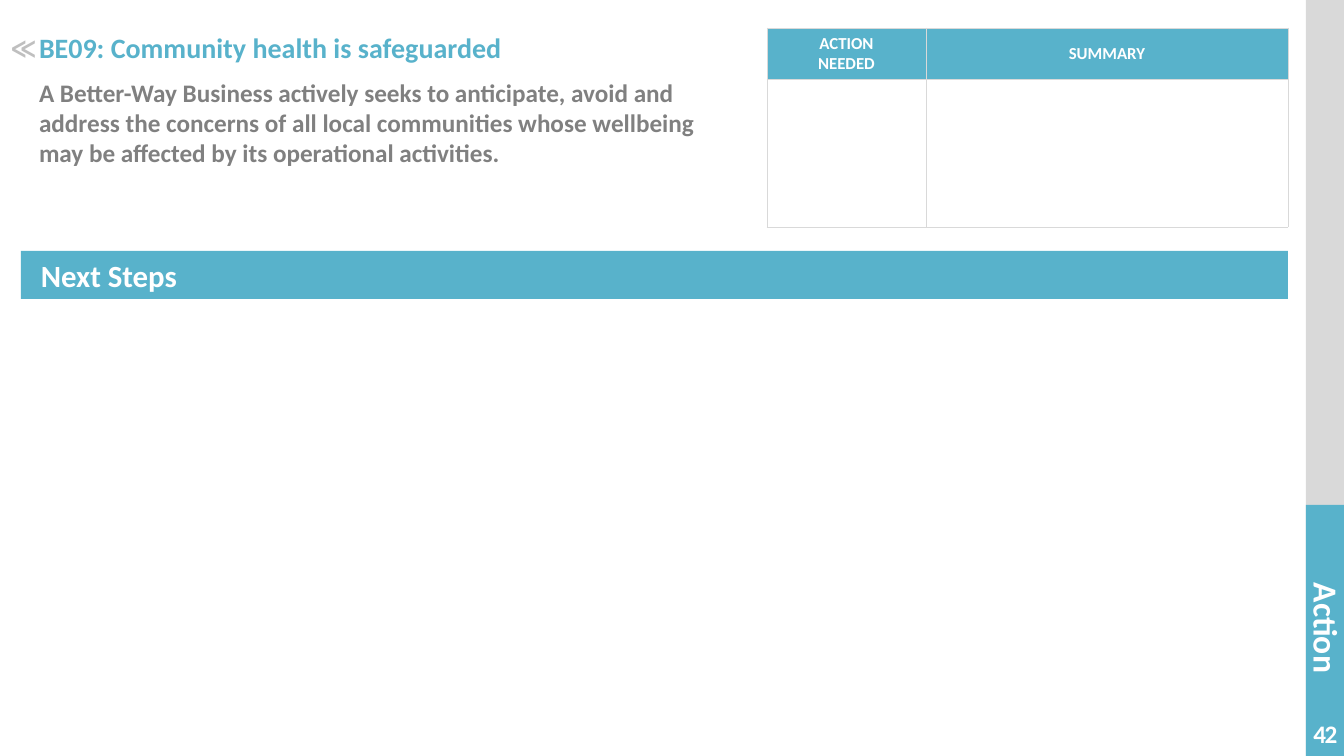
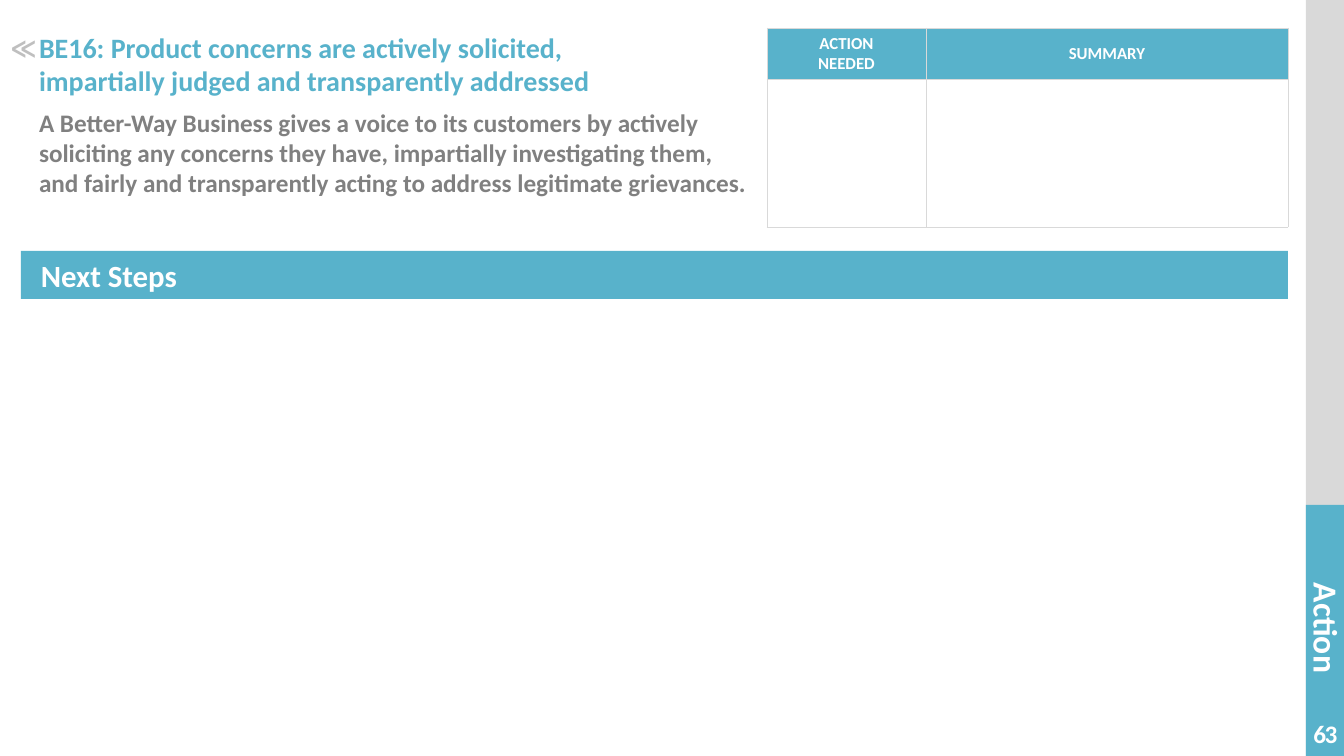
from copy import deepcopy
from dataclasses import dataclass
from typing import NamedTuple

from lxml.etree import SubElement
from pptx import Presentation
from pptx.dml.color import RGBColor as RGB
from pptx.enum.shapes import MSO_SHAPE as Shape
from pptx.enum.text import MSO_ANCHOR as Anchor, MSO_AUTO_SIZE as Fit, PP_ALIGN as Align
from pptx.oxml.ns import qn
from pptx.util import Emu, Pt


@dataclass(frozen=True)
class Theme:
    font: str = "Calibri"
    teal: str = "58B2CB"
    pale: str = "D9D9D9"
    mark: str = "BFBFBF"
    grey: str = "808080"
    white: str = "FFFFFF"
    title: int = 20
    body: int = 18
    band: int = 22
    tab: int = 24
    head: int = 12


class Box(NamedTuple):
    left: int
    top: int
    width: int
    height: int


class Style(NamedTuple):
    size: int
    color: str
    align: Align = Align.LEFT
    anchor: Anchor = Anchor.MIDDLE
    inset: tuple[int, int, int, int] = (0, 0, 0, 0)
    wrap: bool = True


class Goal(NamedTuple):
    title: str
    body: str
    top: int
    page: str


THEME = Theme()
SCALE = 914400 / 100.8
WIDTH, HEIGHT = 1344, 756

RAIL = Box(1306, 0, 38, HEIGHT)
TAB = Box(1306, 505, 38, 251)
BAND = Box(21, 251, 1267, 48)
TITLE = Box(29, 25, 699, 44)
BODY = Box(29, 72, 738, 148)
MARK = Box(4, 35, 39, 24)
PAGE = Box(1307, 711, 37, 45)
TABLE = Box(767, 28, 521, 199)
COLS = (159, 362)
ROWS = (51, 148)
HEADS = ("ACTION\vNEEDED", "SUMMARY")

PAD = (10, 5, 10, 5)
TITLE_STYLE = Style(THEME.title, THEME.teal, anchor=Anchor.TOP, inset=PAD)
BODY_STYLE = Style(THEME.body, THEME.grey, anchor=Anchor.TOP, inset=PAD)
BAND_STYLE = Style(THEME.band, THEME.white, inset=(20, 0, 20, 0), wrap=False)
TAB_STYLE = Style(THEME.tab, THEME.white, Align.CENTER, inset=(4, 0, 0, 5))
HEAD_STYLE = Style(THEME.head, THEME.white, Align.CENTER)
MARK_STYLE = Style(THEME.body, THEME.mark, Align.CENTER, wrap=False)
PAGE_STYLE = Style(THEME.body, THEME.white, Align.CENTER, wrap=False)

GOALS = (
    Goal(
        "BE09: Community health is safeguarded",
        "A Better-Way Business actively seeks to anticipate, avoid and \v"
        "address the concerns of all local communities whose wellbeing \v"
        "may be affected by its operational activities.",
        72,
        "42",
    ),
    Goal(
        "BE16: Product concerns are actively solicited,\v"
        "impartially judged and transparently addressed",
        "A Better-Way Business gives a voice to its customers by actively "
        "soliciting any concerns they have, impartially investigating them,\v"
        "and fairly and transparently acting to address legitimate grievances.",
        102,
        "63",
    ),
)


def px(count: int) -> Emu:
    return Emu(round(count * SCALE))


def place(shape, box: Box) -> None:
    shape.left, shape.top, shape.width, shape.height = map(px, box)


def paint(fill, color: str) -> None:
    fill.solid()
    fill.fore_color.rgb = RGB.from_string(color)


def write(frame, text: str, style: Style) -> None:
    """Set the text of a frame and format its one paragraph."""
    frame.text = text
    para = frame.paragraphs[0]
    para.alignment = style.align
    para.space_before = para.space_after = Pt(0)
    for run in para.runs:
        font = run.font
        font.name, font.size, font.bold = THEME.font, Pt(style.size), True
        font.color.rgb = RGB.from_string(style.color)
    # Line breaks carry their own size, which sets the line height.
    for gap in para._p.findall(qn("a:br")):
        gap.append(deepcopy(para.runs[0]._r.rPr))


def label(shape, text: str, style: Style) -> None:
    frame = shape.text_frame
    write(frame, text, style)
    frame.auto_size = Fit.NONE
    frame.word_wrap = style.wrap
    frame.vertical_anchor = style.anchor
    (frame.margin_left, frame.margin_top,
     frame.margin_right, frame.margin_bottom) = map(px, style.inset)


def bar(slide, box: Box, color: str):
    shape = slide.shapes.add_shape(Shape.RECTANGLE, *map(px, box))
    shape.shadow.inherit = False
    shape.line.fill.background()
    paint(shape.fill, color)
    return shape


def note(slide, box: Box, text: str, style: Style):
    shape = slide.shapes.add_textbox(*map(px, box))
    label(shape, text, style)
    return shape


def frame_cell(cell) -> None:
    """Draw a thin line on all four sides of a cell."""
    props = cell._tc.get_or_add_tcPr()
    for spot, side in enumerate(("lnL", "lnR", "lnT", "lnB")):
        line = SubElement(props, qn(f"a:{side}"), w=str(Pt(0.5)))
        fill = SubElement(line, qn("a:solidFill"))
        SubElement(fill, qn("a:srgbClr"), val=THEME.pale)
        props.insert(spot, line)


def add_grid(slide) -> None:
    grid = slide.shapes.add_table(len(ROWS), len(COLS), *map(px, TABLE)).table
    for col, width in zip(grid.columns, COLS):
        col.width = px(width)
    for row, height in zip(grid.rows, ROWS):
        row.height = px(height)
    for cell in grid.iter_cells():
        paint(cell.fill, THEME.white)
        frame_cell(cell)
    for cell, text in zip(grid.rows[0].cells, HEADS):
        paint(cell.fill, THEME.teal)
        write(cell.text_frame, text, HEAD_STYLE)
        cell.vertical_anchor = Anchor.MIDDLE
        cell.margin_left = cell.margin_right = 0
        cell.margin_top = cell.margin_bottom = 0


def add_bars(slide) -> None:
    """Draw the side rail, its tab and the heading band."""
    bar(slide, RAIL, THEME.pale)
    tab = bar(slide, TAB, THEME.teal)
    label(tab, "Action", TAB_STYLE)
    tab.element.txBody.bodyPr.set("vert", "vert")
    band = bar(slide, BAND, THEME.teal)
    label(band, "Next Steps", BAND_STYLE)
    para = band.text_frame.paragraphs[0]
    para.space_before, para.space_after = Pt(10), Pt(6)


def add_goal(deck, goal: Goal) -> None:
    slide = deck.slides.add_slide(deck.slide_layouts[1])
    title, body = slide.shapes.title, slide.placeholders[1]
    place(title, TITLE)
    label(title, goal.title, TITLE_STYLE)
    place(body, BODY._replace(top=goal.top))
    label(body, goal.body, BODY_STYLE)
    props = body.text_frame.paragraphs[0]._p.get_or_add_pPr()
    props.set("marL", "0")
    props.set("indent", "0")
    SubElement(props, qn("a:buNone"))
    add_bars(slide)
    add_grid(slide)
    note(slide, MARK, "≪", MARK_STYLE)
    page = note(slide, PAGE, goal.page, PAGE_STYLE)
    page.text_frame.paragraphs[0].runs[0]._r.rPr.set("spc", "-100")


def main() -> None:
    deck = Presentation()
    deck.slide_width, deck.slide_height = px(WIDTH), px(HEIGHT)
    for goal in GOALS:
        add_goal(deck, goal)
    deck.save("out.pptx")


if __name__ == "__main__":
    main()
